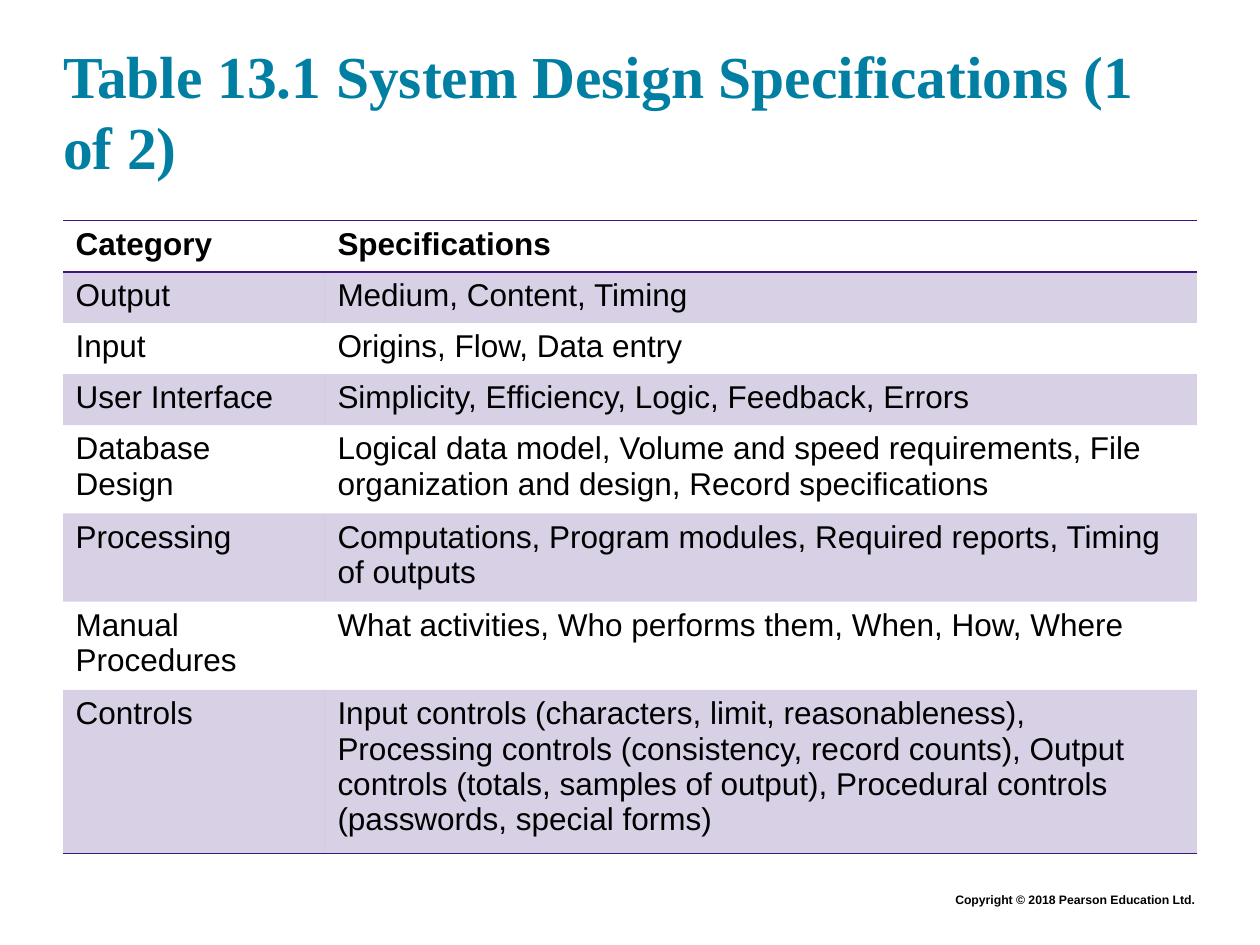
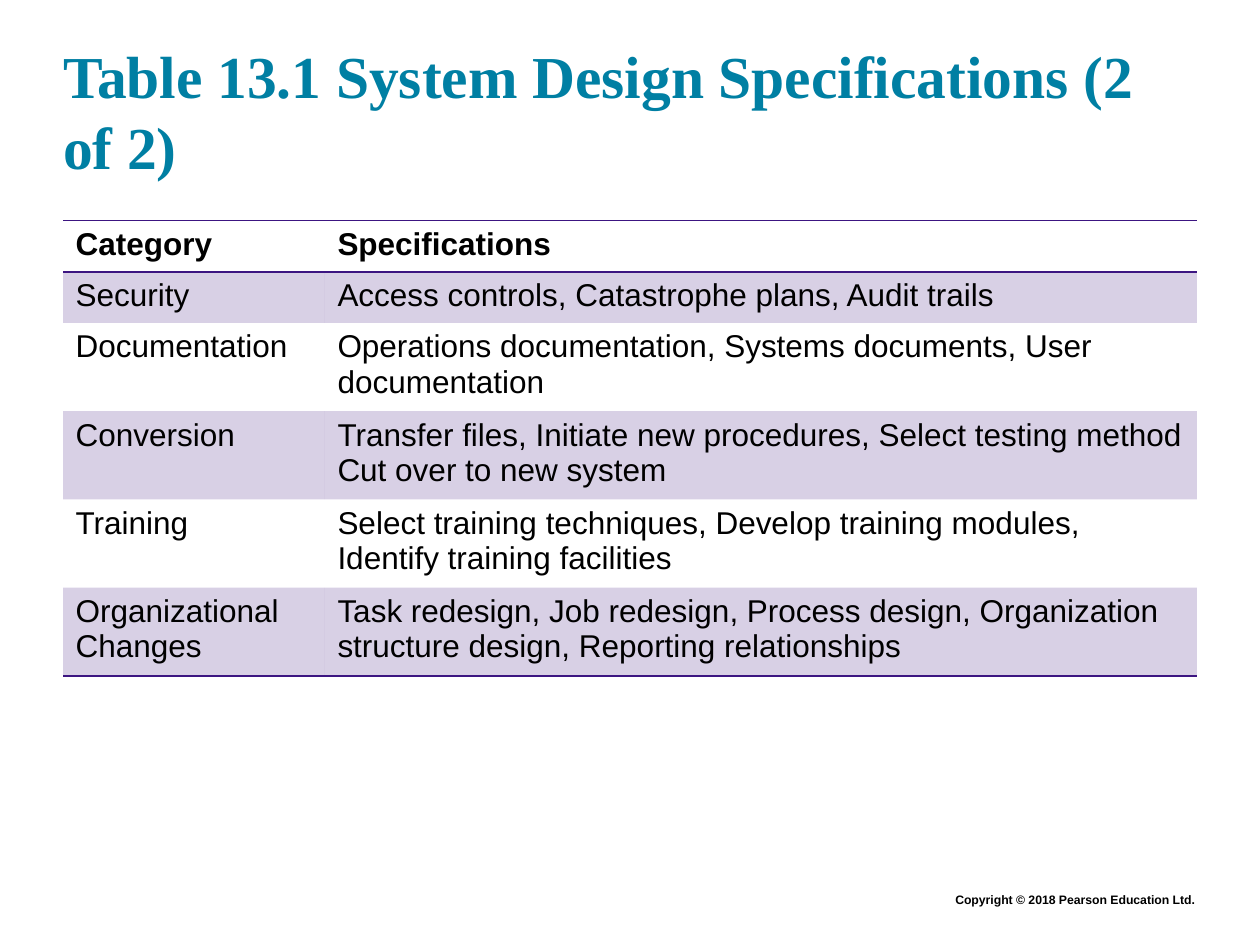
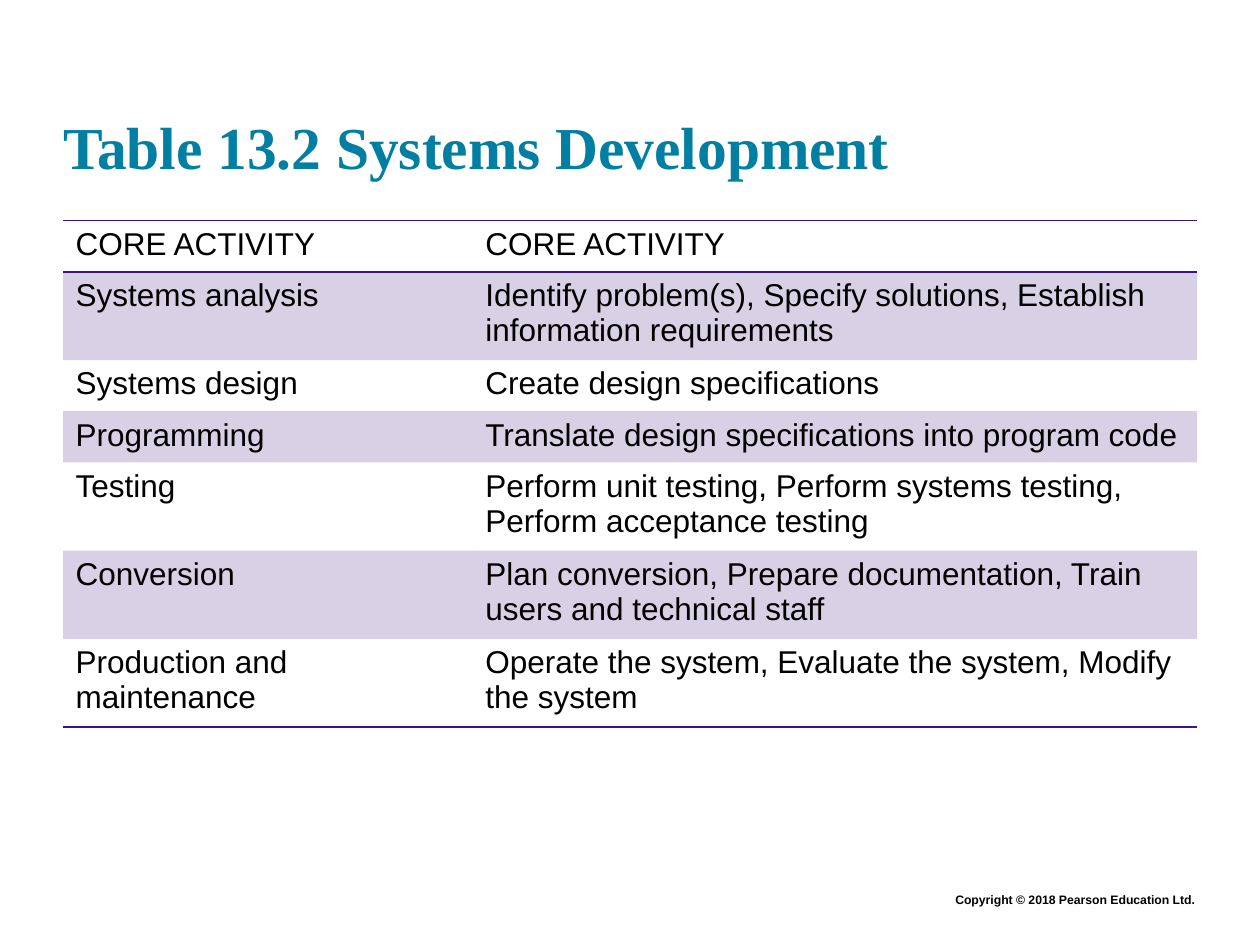
from lxml import etree
from pptx import Presentation
from pptx import util as u
from pptx.dml import color
from pptx.enum import text
from pptx.oxml import ns

Cm = u.Cm

COLORS = {"title": "007FA3", "text": "000000", "accent": "3C1581"}
FORMATS = {
    "title": {"name": "Times New Roman", "size": u.Pt(34), "bold": True},
    "footer": {"name": "Arial", "size": u.Pt(7), "bold": True},
    "header": {"name": "Arial", "size": u.Pt(18), "bold": True},
    "cell": {"name": "Arial", "size": u.Pt(18), "bold": False},
}
FOOTER = "Copyright © 2018 Pearson Education Ltd."
NO_STYLE = "{2D5ABB26-0587-4C30-8999-92F81FD0307C}"
LEFT, WIDTH = 1.27, 22.86
ROW_HEIGHT = 1.03


class Deck:
    """Holds the shared style and the current slide."""

    def __init__(self):
        self.prs = Presentation()
        self.prs.slide_width, self.prs.slide_height = Cm(25.4), Cm(19.05)
        self.s = None

    def format(self, p, kind, align=text.PP_ALIGN.LEFT):
        p.alignment = align
        for name, value in FORMATS[kind].items():
            setattr(p.font, name, value)
        p.font.color.rgb = color.RGBColor.from_string(
            COLORS.get(kind, COLORS["text"]))

    def slide(self, title):
        self.s = self.prs.slides.add_slide(self.prs.slide_layouts[5])
        self.footer()
        self.title(title)

    def title(self, words):
        sp = self.s.shapes.title
        sp.left, sp.top, sp.width, sp.height = (
            Cm(LEFT), Cm(0.61), Cm(WIDTH), Cm(3.05))
        tf = sp.text_frame
        tf.text = words
        frame = {"margin_left": 0, "margin_top": 0, "margin_right": 0,
                 "margin_bottom": 0, "word_wrap": True,
                 "auto_size": text.MSO_AUTO_SIZE.NONE,
                 "vertical_anchor": text.MSO_ANCHOR.BOTTOM}
        for name, value in frame.items():
            setattr(tf, name, value)
        self.format(tf.paragraphs[0], "title")

    def footer(self):
        sp = self.s.shapes.add_textbox(Cm(4.45), Cm(17.86), Cm(19.89), Cm(0.56))
        tf = sp.text_frame
        tf.word_wrap = True
        tf.auto_size = text.MSO_AUTO_SIZE.SHAPE_TO_FIT_TEXT
        tf.text = FOOTER
        self.format(tf.paragraphs[0], "footer", text.PP_ALIGN.RIGHT)

    def table(self, first_width, rows, header="header"):
        frame = self.s.shapes.add_table(
            len(rows), 2, Cm(LEFT), Cm(4.45), Cm(WIDTH),
            Cm(ROW_HEIGHT * len(rows)))
        table = frame.table
        table.first_row = table.horz_banding = False
        table._tbl.tblPr.find(ns.qn("a:tableStyleId")).text = NO_STYLE
        for column, width in zip(table.columns,
                                 (first_width, WIDTH - first_width)):
            column.width = Cm(width)
        last = len(rows) - 1
        for i, row in enumerate(rows):
            table.rows[i].height = Cm(ROW_HEIGHT)
            edges = {0: ("lnT", "lnB"), last: ("lnB",)}.get(i, ())
            for cell, words in zip(table.rows[i].cells, row):
                cell.text = words
                for p in cell.text_frame.paragraphs:
                    self.format(p, "cell" if i else header)
                self.fill(cell, shaded=i % 2 == 1)
                self.borders(cell, edges)

    def fill(self, cell, shaded):
        if not shaded:
            cell.fill.background()
            return
        cell.fill.solid()
        cell.fill.fore_color.rgb = color.RGBColor.from_string(COLORS["accent"])
        rgb = cell._tc.tcPr.find(".//" + ns.qn("a:srgbClr"))
        etree.SubElement(rgb, ns.qn("a:alpha"), val="20000")

    def borders(self, cell, edges):
        # Border lines come before the fill in the cell properties
        for i, edge in enumerate(edges):
            ln = etree.Element(ns.qn("a:" + edge), w=str(u.Pt(1)))
            solid = etree.SubElement(ln, ns.qn("a:solidFill"))
            etree.SubElement(solid, ns.qn("a:srgbClr"), val=COLORS["accent"])
            cell._tc.tcPr.insert(i, ln)


def main():
    deck = Deck()
    head = ("Category", "Specifications")

    # Design specifications, first part
    deck.slide("Table 13.1 System Design Specifications (1 of 2)")
    deck.table(5.28, [
        head,
        ("Output", "Medium, Content, Timing"),
        ("Input", "Origins, Flow, Data entry"),
        ("User Interface", "Simplicity, Efficiency, Logic, Feedback, Errors"),
        ("Database Design",
         "Logical data model, Volume and speed requirements, "
         "File organization and design, Record specifications"),
        ("Processing",
         "Computations, Program modules, Required reports, Timing of outputs"),
        ("Manual Procedures",
         "What activities, Who performs them, When, How, Where"),
        ("Controls",
         "Input controls (characters, limit, reasonableness), "
         "Processing controls (consistency, record counts), "
         "Output controls (totals, samples of output), "
         "Procedural controls (passwords, special forms)"),
    ])

    # Design specifications, second part
    deck.slide("Table 13.1 System Design Specifications (2 of 2)")
    deck.table(5.28, [
        head,
        ("Security", "Access controls, Catastrophe plans, Audit trails"),
        ("Documentation",
         "Operations documentation, Systems documents, User documentation"),
        ("Conversion",
         "Transfer files, Initiate new procedures, Select testing method\n"
         "Cut over to new system"),
        ("Training",
         "Select training techniques, Develop training modules, "
         "Identify training facilities"),
        ("Organizational Changes",
         "Task redesign, Job redesign, Process design, "
         "Organization structure design, Reporting relationships"),
    ])

    # Development activities
    deck.slide("Table 13.2 Systems Development")
    deck.table(8.26, [
        ("CORE ACTIVITY", "CORE ACTIVITY"),
        ("Systems analysis",
         "Identify problem(s), Specify solutions, "
         "Establish information requirements"),
        ("Systems design", "Create design specifications"),
        ("Programming", "Translate design specifications into program code"),
        ("Testing",
         "Perform unit testing, Perform systems testing, "
         "Perform acceptance testing"),
        ("Conversion",
         "Plan conversion, Prepare documentation, "
         "Train users and technical staff"),
        ("Production and maintenance",
         "Operate the system, Evaluate the system, Modify the system"),
    ], header="cell")

    deck.prs.save("out.pptx")


if __name__ == "__main__":
    main()
